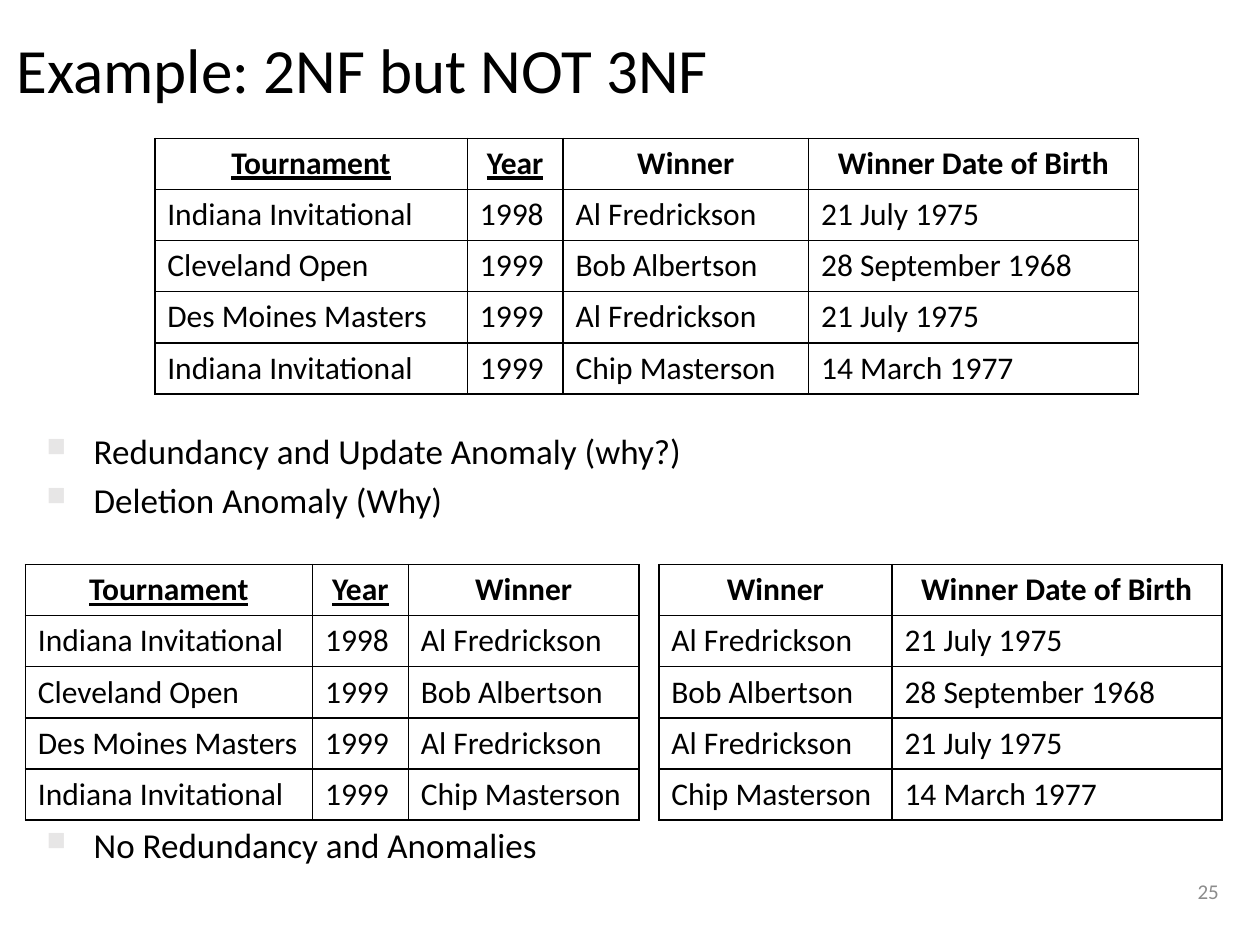
from lxml import etree
from pptx import Presentation
from pptx import util as u
from pptx.dml.color import RGBColor
from pptx.enum import text as t
from pptx.oxml import ns

Cm, Pt = u.Cm, u.Pt
FONT = "Calibri"
HUES = {"ink": "000000", "page": "8C8C8C", "mark": "E7E6E6"}
HANG = Cm(0.95)
ROW = 1.03

# Columns: name, part of the key
HEADS = [("Tournament", True), ("Year", True),
         ("Winner", False), ("Winner Date of Birth", False)]
ROWS = [
    ("Indiana Invitational", "1998", "Al Fredrickson", "21 July 1975"),
    ("Cleveland Open", "1999", "Bob Albertson", "28 September 1968"),
    ("Des Moines Masters", "1999", "Al Fredrickson", "21 July 1975"),
    ("Indiana Invitational", "1999", "Chip Masterson", "14 March 1977"),
]


def add_run(para, words, size, hue="ink", bold=False, under=False):
    run = para.add_run()
    run.text = words
    font = run.font
    font.name, font.size = FONT, Pt(size)
    font.bold, font.underline = bold, under
    font.color.rgb = RGBColor.from_string(HUES[hue])


def add_node(parent, tag, **attrs):
    node = etree.SubElement(parent, ns.qn(tag))
    for key, value in attrs.items():
        node.set(key, str(value))
    return node


def hang(para):
    props = para._p.get_or_add_pPr()
    props.set("marL", str(HANG))
    props.set("indent", str(-HANG))
    return props


def add_box(slide, left, top, width, height, anchor=t.MSO_ANCHOR.TOP):
    box = slide.shapes.add_textbox(Cm(left), Cm(top), Cm(width), Cm(height))
    frame = box.text_frame
    frame.word_wrap = True
    frame.vertical_anchor = anchor
    return frame


def add_list(slide, top, lines):
    frame = add_box(slide, 0.69, top, 24, 1.98)
    for i, line in enumerate(lines):
        para = frame.add_paragraph() if i else frame.paragraphs[0]
        para.space_before = Pt(4)
        props = hang(para)
        add_node(add_node(props, "a:buClr"), "a:srgbClr", val=HUES["mark"])
        add_node(props, "a:buSzPct", val=75000)
        add_node(props, "a:buChar", char="■")
        add_run(para, line, 20)


def frame_cell(cell):
    props = cell._tc.get_or_add_tcPr()
    for side in ("a:lnL", "a:lnR", "a:lnT", "a:lnB"):
        line = add_node(props, side, w=Pt(1))
        fill = add_node(line, "a:solidFill")
        add_node(fill, "a:srgbClr", val=HUES["ink"])
    cell.fill.background()


def add_grid(slide, left, top, widths, first):
    """Show the columns from number first on, one for each width."""
    count = len(ROWS) + 1
    grid = slide.shapes.add_table(count, len(widths), Cm(left), Cm(top),
                                  Cm(sum(widths)), Cm(ROW * count)).table
    grid.first_row = grid.horz_banding = False
    for row in grid.rows:
        row.height = Cm(ROW)
    for c, width in enumerate(widths):
        grid.columns[c].width = Cm(width)
        name, key = HEADS[first + c]
        for r, words in enumerate([name] + [row[first + c] for row in ROWS]):
            cell = grid.cell(r, c)
            frame_cell(cell)
            para = cell.text_frame.paragraphs[0]
            hang(para)
            head = r == 0
            if head:
                para.alignment = t.PP_ALIGN.CENTER
            add_run(para, words, 18, bold=head, under=head and key)


def main():
    deck = Presentation()
    deck.slide_width, deck.slide_height = Cm(25.4), Cm(19.05)
    slide = deck.slides.add_slide(deck.slide_layouts[6])

    # Page number
    para = add_box(slide, 18.9, 17.32, 5.92, 1.27,
                   t.MSO_ANCHOR.MIDDLE).paragraphs[0]
    para.alignment = t.PP_ALIGN.RIGHT
    add_run(para, "25", 12, "page")

    # Title
    para = add_box(slide, 0.08, 0.13, 22.86, 2.67,
                   t.MSO_ANCHOR.MIDDLE).paragraphs[0]
    para.line_spacing = 0.9
    add_run(para, "Example: 2NF but NOT 3NF", 36)

    # Table in 2NF and its problems
    add_grid(slide, 3.12, 2.79, [6.3, 1.93, 4.95, 6.65], 0)
    add_list(slide, 8.53, ["Redundancy and Update Anomaly (why?)",
                           "Deletion Anomaly (Why)"])

    # Split into two tables in 3NF
    add_grid(slide, 0.51, 11.38, [5.79, 1.93, 4.65], 0)
    add_grid(slide, 13.28, 11.38, [4.7, 6.65], 2)
    add_list(slide, 16.48, ["No Redundancy and Anomalies"])

    deck.save("out.pptx")


if __name__ == "__main__":
    main()
